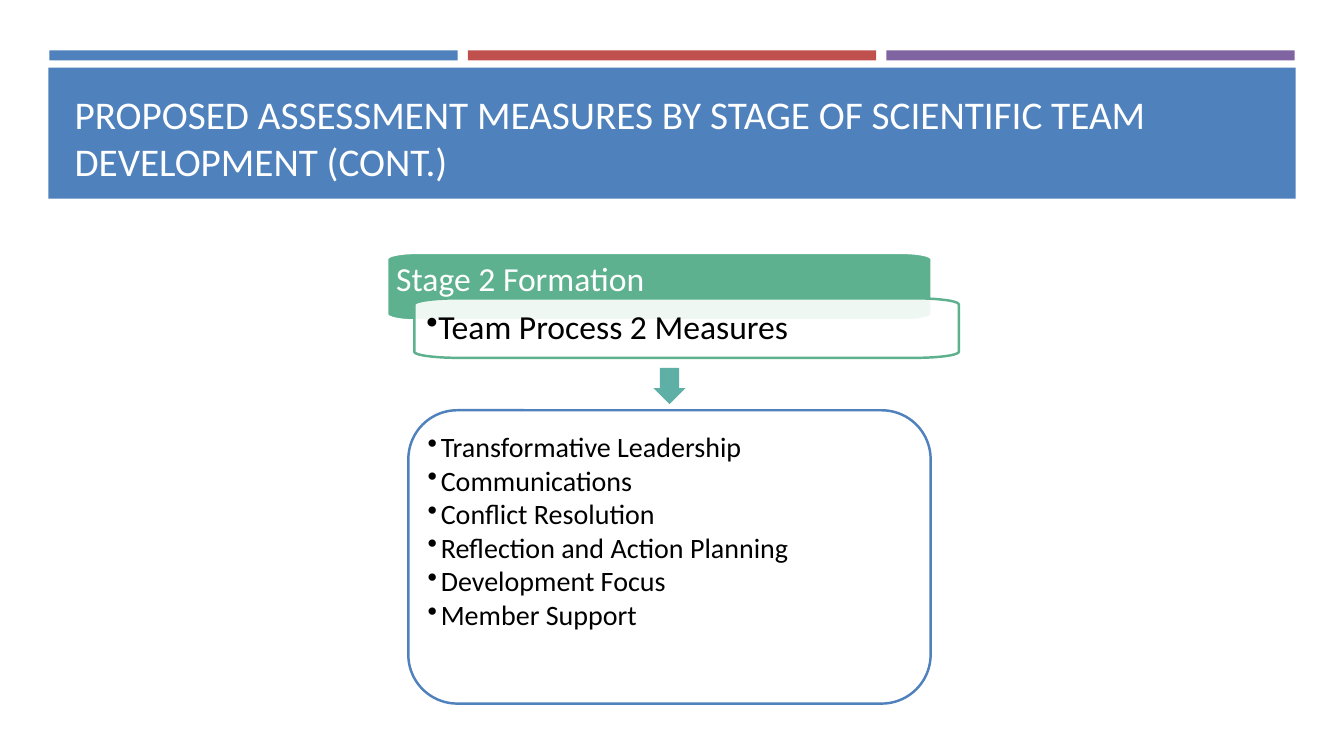
from dataclasses import dataclass
from math import cos, pi, sin

from lxml.etree import SubElement
from pptx import Presentation
from pptx.dml.color import RGBColor
from pptx.enum.shapes import MSO_SHAPE
from pptx.enum.text import MSO_ANCHOR, PP_ALIGN
from pptx.oxml.ns import qn
from pptx.util import Inches, Pt


@dataclass(frozen=True)
class Theme:
    font: str = "Calibri"
    blue: str = "4F81BD"
    red: str = "C0504D"
    purple: str = "8064A2"
    green: str = "5DB18E"
    teal: str = "5EAFA6"
    white: str = "FFFFFF"
    black: str = "000000"
    title_size: int = 28
    stage_size: int = 24
    list_size: int = 20
    outline: float = 1.75


class SlideBuilder:
    def __init__(self, slide, theme):
        self.slide = slide
        self.theme = theme

    def paint(self, shape, fill, line=None, opacity=None):
        shape.shadow.inherit = False
        shape.fill.solid()
        shape.fill.fore_color.rgb = RGBColor.from_string(fill)
        if opacity is not None:
            color = shape.fill._xPr.find(qn("a:solidFill"))[0]
            SubElement(color, qn("a:alpha"), val=str(opacity * 1000))
        if line:
            shape.line.color.rgb = RGBColor.from_string(line)
            shape.line.width = Pt(self.theme.outline)
        else:
            shape.line.fill.background()
        return shape

    def block(self, kind, left, top, width, height, fill, line=None):
        shape = self.slide.shapes.add_shape(
            kind, Inches(left), Inches(top), Inches(width), Inches(height))
        return self.paint(shape, fill, line)

    def soft_panel(self, left, top, width, height, radius_x, radius_y,
                   fill, line, opacity=None):
        corners = [
            (left + width - radius_x, top + height - radius_y),
            (left + radius_x, top + height - radius_y),
            (left + radius_x, top + radius_y),
            (left + width - radius_x, top + radius_y),
        ]
        steps = 10
        outline = []
        for quarter, (x, y) in enumerate(corners):
            for step in range(steps + 1):
                angle = (quarter + step / steps) * pi / 2
                outline.append((Inches(x + radius_x * cos(angle)),
                                Inches(y + radius_y * sin(angle))))
        builder = self.slide.shapes.build_freeform(*outline[0])
        builder.add_line_segments(outline[1:], close=True)
        return self.paint(builder.convert_to_shape(), fill, line, opacity)

    def set_text(self, shape, text, size, color, insets,
                 anchor=MSO_ANCHOR.TOP, spacing=1.0, bullet_indent=None):
        frame = shape.text_frame
        frame.text = text
        frame.word_wrap = True
        frame.vertical_anchor = anchor
        (frame.margin_left, frame.margin_top,
         frame.margin_right, frame.margin_bottom) = map(Inches, insets)
        for paragraph in frame.paragraphs:
            paragraph.alignment = PP_ALIGN.LEFT
            paragraph.line_spacing = spacing
            paragraph.space_before = paragraph.space_after = Pt(0)
            if bullet_indent:
                properties = paragraph._p.get_or_add_pPr()
                properties.set("marL", str(Inches(bullet_indent)))
                properties.set("indent", str(-Inches(bullet_indent)))
                SubElement(properties, qn("a:buChar"), char="•")
            for run in paragraph.runs:
                run.font.name = self.theme.font
                run.font.size = Pt(size)
                run.font.color.rgb = RGBColor.from_string(color)

    def title(self, text, left, top, width, height):
        title = self.slide.shapes.title
        title.left, title.top = Inches(left), Inches(top)
        title.width, title.height = Inches(width), Inches(height)
        self.set_text(title, text, self.theme.title_size, self.theme.white,
                      (0.1, 0.05, 0.1, 0.05), MSO_ANCHOR.BOTTOM)
        title.element.getparent().append(title.element)


def main():
    theme = Theme()
    deck = Presentation()
    deck.slide_width, deck.slide_height = Inches(13.33), Inches(7.5)
    page = SlideBuilder(deck.slides.add_slide(deck.slide_layouts[5]), theme)

    for column, color in enumerate((theme.blue, theme.red, theme.purple)):
        page.block(MSO_SHAPE.RECTANGLE, 0.49 + column * 4.15, 0.5, 4.05, 0.1, color)
    page.block(MSO_SHAPE.RECTANGLE, 0.48, 0.67, 12.37, 1.3, theme.blue)
    page.title("PROPOSED ASSESSMENT MEASURES BY STAGE OF SCIENTIFIC TEAM "
               "DEVELOPMENT (CONT.)", 0.64, 0.77, 12.06, 1.11)

    stage = page.soft_panel(3.84, 2.51, 5.4, 0.67, 0.28, 0.06,
                            theme.green, theme.white)
    page.set_text(stage, "Stage 2 Formation", theme.stage_size, theme.white,
                  (0.09, 0.09, 0.09, 0.27), spacing=0.9)

    process = page.soft_panel(4.11, 2.96, 5.4, 0.59, 0.43, 0.06,
                              theme.white, theme.green, opacity=90)
    page.set_text(process, "Team Process 2 Measures", theme.stage_size, theme.black,
                  (0.12,) * 4, spacing=0.9, bullet_indent=0.06)

    measures = page.block(MSO_SHAPE.ROUNDED_RECTANGLE, 4.05, 4.07, 5.18, 2.91,
                          theme.white, theme.blue)
    page.set_text(measures, "\n".join((
        "Transformative Leadership",
        "Communications",
        "Conflict Resolution",
        "Reflection and Action Planning",
        "Development Focus",
        "Member Support",
    )), theme.list_size, theme.black, (0.05,) * 4, bullet_indent=0.13)

    arrow = page.block(MSO_SHAPE.RIGHT_ARROW, 6.46, 3.67, 0.36, 0.32, theme.teal)
    arrow.rotation = 90
    arrow.adjustments[0] = 0.6
    arrow.adjustments[1] = 0.5

    deck.save("out.pptx")


if __name__ == "__main__":
    main()
